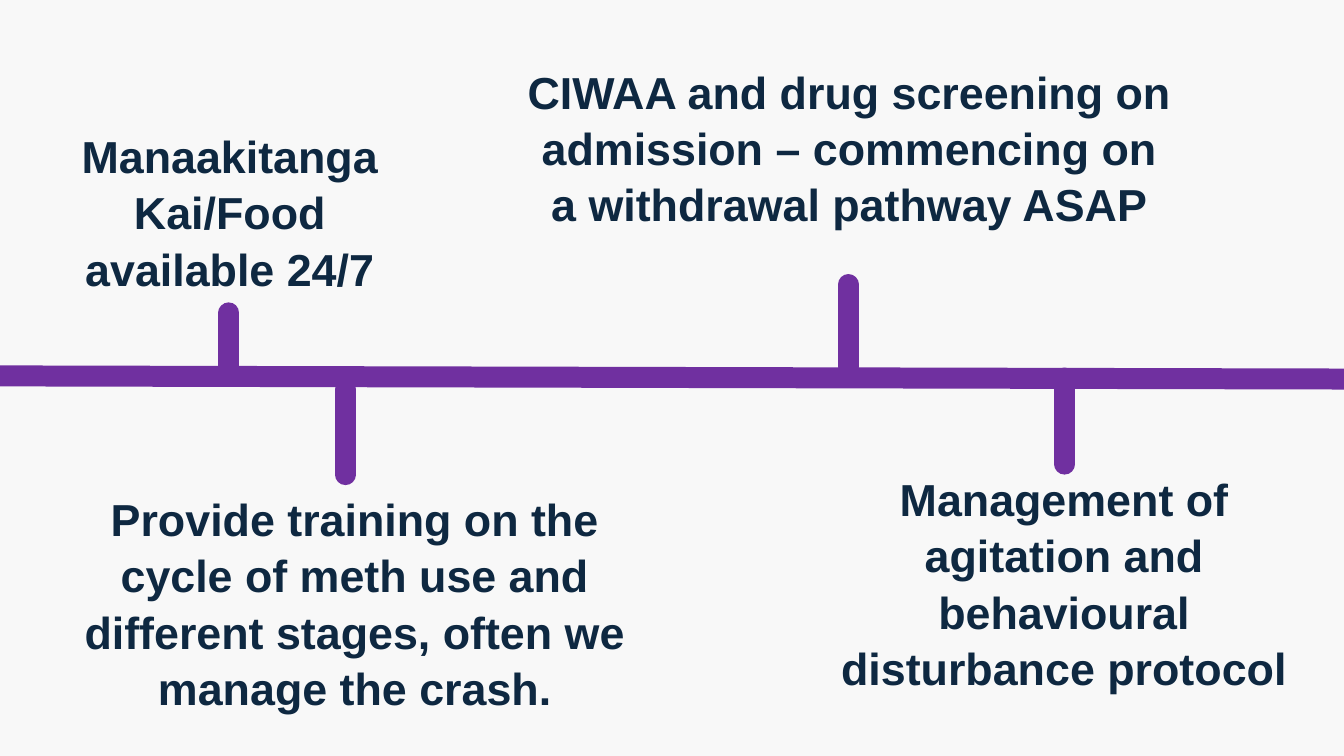
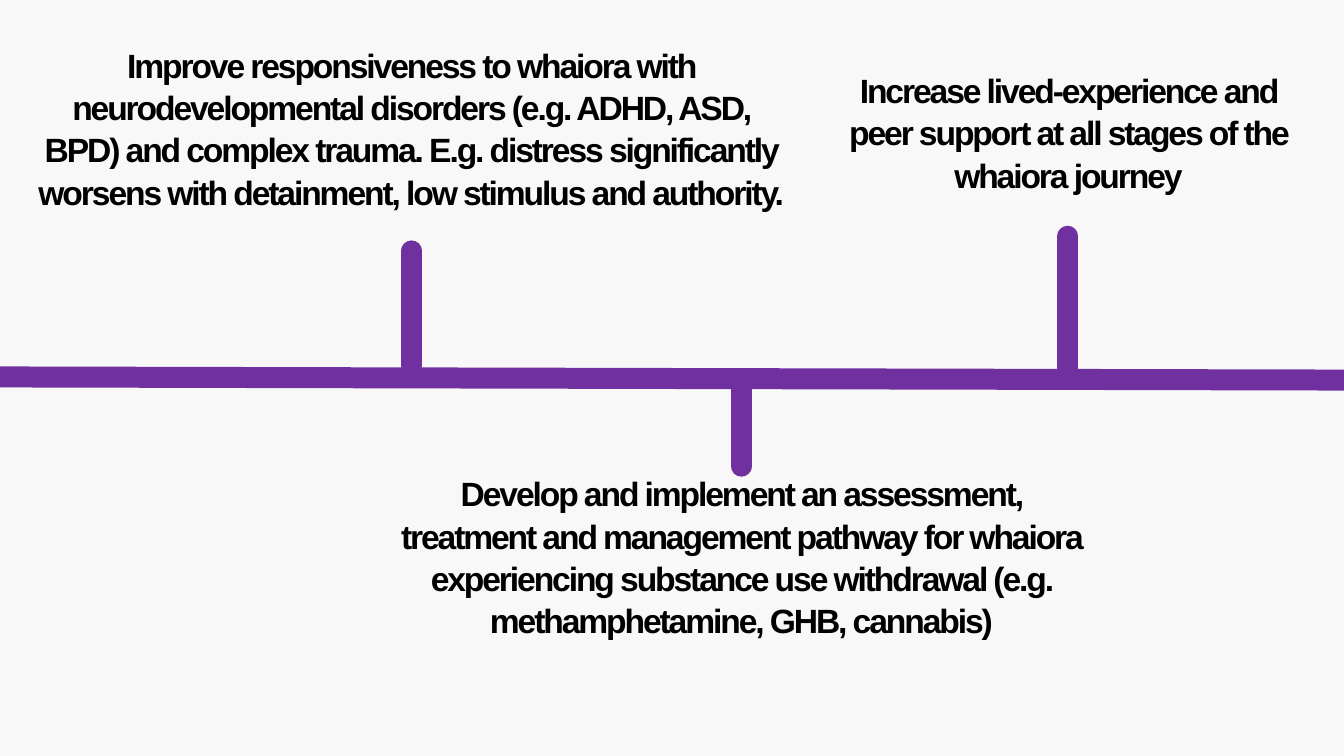
from pptx import Presentation
from pptx.dml.color import RGBColor
from pptx.enum.shapes import MSO_CONNECTOR
from pptx.enum.text import PP_ALIGN
from pptx.oxml.ns import qn
from pptx.util import Emu, Pt
from lxml import etree

STRAIGHT = MSO_CONNECTOR.STRAIGHT
CENTER = PP_ALIGN.CENTER
PX = 9525
WIDTH, HEIGHT = 1280, 720
BACKGROUND, PURPLE, NAVY, BLACK = "F8F8F8", "7030A0", "0E2841", "000000"
LINE_SPACING = 1.05


def color(value):
    return RGBColor.from_string(value)


def add_bar(slide, x1, y1, x2, y2, cap):
    bar = slide.shapes.add_connector(
        STRAIGHT, *(Emu(v * PX) for v in (x1, y1, x2, y2)))
    bar.line.color.rgb = color(PURPLE)
    bar.line.width = Pt(15)
    properties = bar._element.spPr
    properties.find(qn("a:ln")).set("cap", cap)
    etree.SubElement(properties, qn("a:effectLst"))


# Each slide: text style, axis heights at both edges, stems and milestones
timelines = [
    {
        "font": {"name": "Arial", "size": Pt(32), "bold": True},
        "color": NAVY,
        "tracking": 0,
        "axis": (358, 361),
        "stems": [(218, 298, 349), (808, 271, 349),
                  (1014, 360, 442), (329, 371, 452)],
        "milestones": [
            ((29, 115, 380, 165), ["Manaakitanga", "Kai/Food available 24/7"]),
            ((56, 461, 564, 217),
             ["Provide training on the cycle of meth use and different "
              "stages, often we manage the crash."]),
            ((492, 54, 634, 217),
             ["CIWAA and drug screening on admission – commencing on "
              "a withdrawal pathway ASAP"]),
            ((779, 442, 469, 268),
             ["Management of agitation and behavioural disturbance protocol"]),
        ],
    },
    {
        "font": {"name": "Arial", "size": Pt(24), "bold": True},
        "color": BLACK,
        "tracking": -150,
        "axis": (359, 362),
        "stems": [(392, 239, 348), (706, 371, 444), (1017, 225, 361)],
        "milestones": [
            ((363, 444, 686, 204),
             ["Develop and implement an assessment, treatment and management "
              "pathway for whaiora experiencing substance use withdrawal "
              "(e.g. methamphetamine, GHB, cannabis)"]),
            ((26, 36, 731, 204),
             ["Improve responsiveness to whaiora with neurodevelopmental "
              "disorders (e.g. ADHD, ASD, BPD) and complex trauma. E.g. "
              "distress significantly worsens with detainment, low stimulus "
              "and authority."]),
            ((794, 60, 447, 165),
             ["Increase lived-experience and peer support at all stages of "
              "the whaiora journey"]),
        ],
    },
]

prs = Presentation()
prs.slide_width, prs.slide_height = Emu(WIDTH * PX), Emu(HEIGHT * PX)
blank = prs.slide_layouts[6]

for timeline in timelines:
    slide = prs.slides.add_slide(blank)
    slide.background.fill.solid()
    slide.background.fill.fore_color.rgb = color(BACKGROUND)

    # Axis and stems
    left_y, right_y = timeline["axis"]
    add_bar(slide, 0, left_y, WIDTH, right_y, "flat")
    for x, top, bottom in timeline["stems"]:
        add_bar(slide, x, top, x, bottom, "rnd")

    # Milestone texts
    for place, lines in timeline["milestones"]:
        milestone = slide.shapes.add_textbox(*(Emu(v * PX) for v in place))
        frame = milestone.text_frame
        frame.word_wrap = True
        for index, line in enumerate(lines):
            paragraph = frame.add_paragraph() if index else frame.paragraphs[0]
            paragraph.alignment = CENTER
            paragraph.line_spacing = LINE_SPACING
            run = paragraph.add_run()
            run.text = line
            for name, value in timeline["font"].items():
                setattr(run.font, name, value)
            run.font.color.rgb = color(timeline["color"])
            if timeline["tracking"]:
                run._r.get_or_add_rPr().set("spc", str(timeline["tracking"]))

prs.save("out.pptx")
